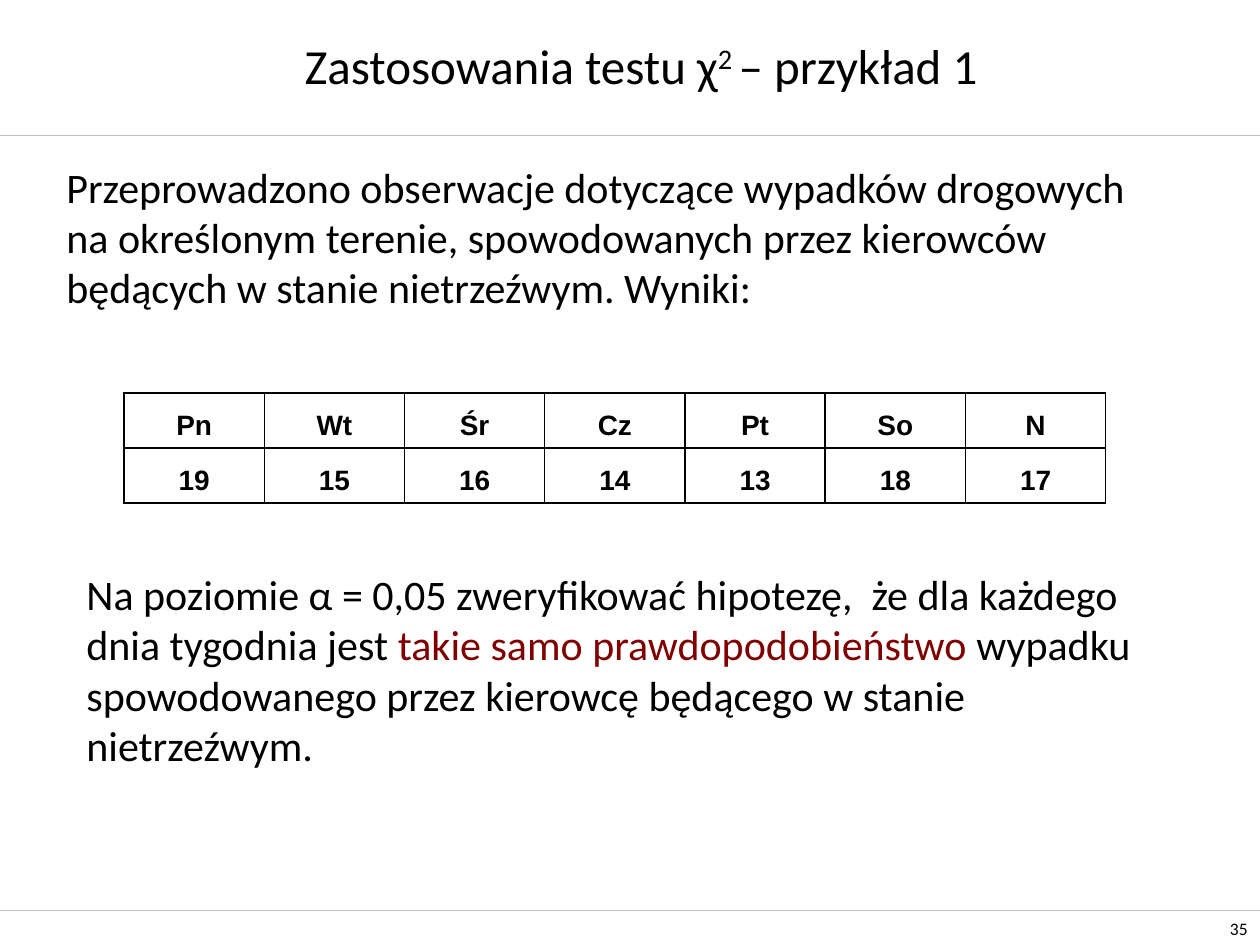
from dataclasses import dataclass

from lxml import etree
from pptx import Presentation
from pptx import util as u
from pptx.dml.color import RGBColor
from pptx.enum import shapes, text
from pptx.oxml.ns import qn

EMU_PER_PX = 914400 / 126
SLIDE_W, SLIDE_H = 1260, 945


def px(n):
    return u.Emu(round(n * EMU_PER_PX))


@dataclass(frozen=True)
class Theme:
    ink: str = "000000"
    accent: str = "800000"
    rule: str = "C0C0C0"
    font: str = "Calibri"
    table_font: str = "Arial"
    title: int = 28
    body: int = 24
    cell: int = 16
    number: int = 10
    rule_width: float = 0.25
    border_width: int = 1


def add_run(p, words, *, size, font, color, bold=False, raised=False):
    r = p.add_run()
    r.text = words
    r.font.size = u.Pt(size)
    r.font.name = font
    r.font.bold = bold
    r.font.color.rgb = RGBColor.from_string(color)
    if raised:
        r.font._element.set("baseline", "30000")


class SlideBuilder:
    def __init__(self, slide, theme):
        self.s = slide
        self.theme = theme

    def rule(self, y):
        """Draw a thin line across the whole slide."""
        line = self.s.shapes.add_connector(
            shapes.MSO_CONNECTOR.STRAIGHT, 0, px(y), px(SLIDE_W), px(y))
        line.line.color.rgb = RGBColor.from_string(self.theme.rule)
        line.line.width = u.Pt(self.theme.rule_width)
        etree.SubElement(line._element.spPr, qn("a:effectLst"))

    def text(self, box, runs, *, size, align=text.PP_ALIGN.LEFT,
             anchor=text.MSO_ANCHOR.TOP):
        """Add one paragraph; runs are (words, format overrides) pairs."""
        sp = self.s.shapes.add_textbox(*map(px, box))
        tf = sp.text_frame
        tf.word_wrap = True
        tf.vertical_anchor = anchor
        p = tf.paragraphs[0]
        p.alignment = align
        base = {"size": size, "font": self.theme.font, "color": self.theme.ink}
        for words, style in runs:
            add_run(p, words, **{**base, **style})

    def table(self, box, rows):
        shape = self.s.shapes.add_table(len(rows), len(rows[0]), *map(px, box))
        table = shape.table
        table.first_row = table.horz_banding = False
        for i, row in enumerate(rows):
            for j, value in enumerate(row):
                self.cell(table.cell(i, j), value)

    def cell(self, cell, value):
        cell.fill.background()
        cell.vertical_anchor = text.MSO_ANCHOR.BOTTOM
        p = cell.text_frame.paragraphs[0]
        p.alignment = text.PP_ALIGN.CENTER
        hang = px(48)
        pPr = p._p.get_or_add_pPr()
        pPr.set("marL", str(hang))
        pPr.set("indent", str(-hang))
        add_run(p, value, size=self.theme.cell, font=self.theme.table_font,
                color=self.theme.ink, bold=True)
        tcPr = cell._tc.get_or_add_tcPr()
        for i, side in enumerate(("lnL", "lnR", "lnT", "lnB")):
            ln = etree.Element(qn(f"a:{side}"),
                               w=str(u.Pt(self.theme.border_width)))
            fill = etree.SubElement(ln, qn("a:solidFill"))
            etree.SubElement(fill, qn("a:srgbClr"), val=self.theme.ink)
            tcPr.insert(i, ln)


def main():
    prs = Presentation()
    prs.slide_width, prs.slide_height = px(SLIDE_W), px(SLIDE_H)
    theme = Theme()
    s = SlideBuilder(prs.slides.add_slide(prs.slide_layouts[6]), theme)

    for y in (135, 910):
        s.rule(y)
    s.text((1196, 910, 64, 35), [("35", {})], size=theme.number,
           align=text.PP_ALIGN.RIGHT, anchor=text.MSO_ANCHOR.BOTTOM)
    s.text((144, 0, 994, 130),
           [("Zastosowania testu χ", {}), ("2 ", {"raised": True}),
            ("– przykład 1", {})],
           size=theme.title, align=text.PP_ALIGN.CENTER,
           anchor=text.MSO_ANCHOR.MIDDLE)
    s.text((54, 155, 1116, 164),
           [("Przeprowadzono obserwacje dotyczące wypadków drogowych na "
             "określonym terenie, spowodowanych przez kierowców będących "
             "w stanie nietrzeźwym. Wyniki:", {})],
           size=theme.body)
    s.table((124, 393, 982, 110),
            [("Pn", "Wt", "Śr", "Cz", "Pt", "So", "N"),
             ("19", "15", "16", "14", "13", "18", "17")])
    s.text((74, 562, 1126, 223),
           [("Na poziomie α = 0,05 zweryfikować hipotezę,  że dla każdego "
             "dnia tygodnia jest ", {}),
            ("takie samo prawdopodobieństwo ", {"color": theme.accent}),
            ("wypadku spowodowanego przez kierowcę będącego w stanie "
             "nietrzeźwym.", {})],
           size=theme.body)

    prs.save("out.pptx")


if __name__ == "__main__":
    main()
